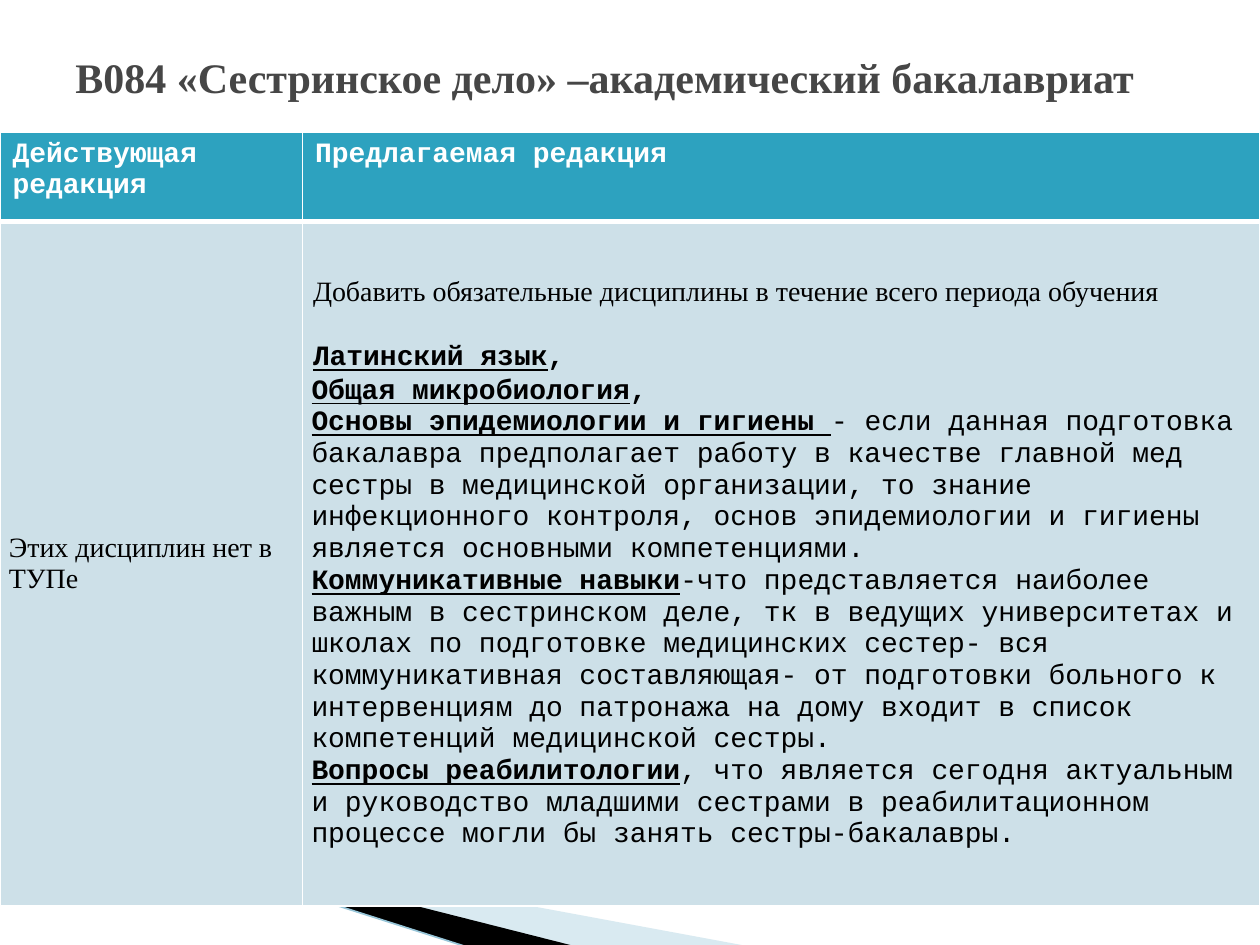
import pptx
import pptx.util
import pptx.dml.color
import pptx.enum.shapes
import pptx.enum.text
import pptx.oxml
import pptx.oxml.ns
from lxml import etree

Cm = pptx.util.Cm
Pt = pptx.util.Pt
RGBColor = pptx.dml.color.RGBColor
qn = pptx.oxml.ns.qn
ALIGN = pptx.enum.text.PP_ALIGN
ANCHOR = pptx.enum.text.MSO_ANCHOR

WHITE = RGBColor(0xFF, 0xFF, 0xFF)
BLACK = RGBColor(0, 0, 0)
GRAY = RGBColor(0x46, 0x46, 0x46)
TEAL = RGBColor(0x2D, 0xA2, 0xBF)
PALE = RGBColor(0xCD, 0xE0, 0xE8)
WAVE = RGBColor(0xA0, 0xCB, 0xDC)
EDGE = RGBColor(0x97, 0xC5, 0xD8)
SERIF, MONO = "Times New Roman", "Courier New"

TITLE = "В084 «Сестринское дело» –академический бакалавриат"
HEADERS = ["Действующая редакция", "Предлагаемая редакция"]
CURRENT = "Этих дисциплин нет в ТУПе"
INTRO = "Добавить обязательные дисциплины в течение всего периода обучения"
DISCIPLINES = [
    ("Латинский язык", ",", True),
    ("Общая микробиология", ",", True),
    ("Основы эпидемиологии и гигиены ",
     "- если данная подготовка бакалавра предполагает работу в качестве главной мед сестры "
     "в медицинской организации, то знание инфекционного контроля, основ эпидемиологии и "
     "гигиены является основными компетенциями.", False),
    ("Коммуникативные навыки",
     "-что представляется наиболее важным в сестринском деле, тк в ведущих университетах и "
     "школах по подготовке медицинских сестер- вся коммуникативная составляющая- от "
     "подготовки больного к интервенциям до патронажа на дому входит в список компетенций "
     "медицинской сестры.", False),
    ("Вопросы реабилитологии",
     ", что является сегодня актуальным и руководство младшими сестрами в реабилитационном "
     "процессе могли бы занять сестры-бакалавры.", False),
]
WAVES = [
    (WAVE, 40, [(1.4, 16.54), (15.11, 19.08), (11.58, 19.08), (1.4, 16.51)]),
    (BLACK, 100, [(1.35, 16.48), (11.61, 19.08), (9.45, 19.1), (1.37, 16.51)]),
]
COLUMNS = [6.1, 19.3]
ROWS = [1.8, 13.79]


def add_wave(slide, color, opacity, points):
    corners = [(Cm(x), Cm(y)) for x, y in points]
    builder = slide.shapes.build_freeform(*corners[0])
    builder.add_line_segments(corners[1:], close=True)
    shape = builder.convert_to_shape()
    shape.shadow.inherit = False
    shape.fill.solid()
    shape.fill.fore_color.rgb = color
    shape.line.fill.background()
    if opacity < 100:
        srgb = shape.fill._xPr.find(".//" + qn("a:srgbClr"))
        etree.SubElement(srgb, qn("a:alpha")).set("val", str(opacity * 1000))


def add_run(paragraph, text, font, color, size=16, bold=False, underline=False):
    run = paragraph.add_run()
    run.text = text
    run.font.name = font
    run.font.size = Pt(size)
    run.font.color.rgb = color
    run.font.bold = bold
    run.font.underline = underline


def style_cell(cell, color, top, bottom):
    properties = cell._tc.get_or_add_tcPr()
    for side, width in (("L", 1), ("R", 1), ("T", top), ("B", bottom)):
        border = etree.SubElement(properties, qn("a:ln" + side), w=str(Pt(width)))
        fill = etree.SubElement(border, qn("a:solidFill"))
        etree.SubElement(fill, qn("a:srgbClr"), val=str(WHITE))
    cell.fill.solid()
    cell.fill.fore_color.rgb = color


def main():
    presentation = pptx.Presentation()
    presentation.slide_width, presentation.slide_height = Cm(25.4), Cm(19.05)
    slide = presentation.slides.add_slide(presentation.slide_layouts[6])

    for wave in WAVES:
        add_wave(slide, *wave)
    edge = slide.shapes.add_connector(
        pptx.enum.shapes.MSO_CONNECTOR.STRAIGHT, Cm(-0.03), Cm(16.08), Cm(9.45), Cm(19.1))
    edge.line.color.rgb = EDGE
    edge.line.width = Pt(0.95)
    etree.SubElement(edge._element.spPr, qn("a:effectLst"))

    title = slide.shapes.add_textbox(Cm(1.27), Cm(0.36), Cm(22.86), Cm(2.39))
    title.text_frame.word_wrap = True
    title.text_frame.vertical_anchor = ANCHOR.MIDDLE
    add_run(title.text_frame.paragraphs[0], TITLE, SERIF, GRAY, size=24, bold=True)

    table = slide.shapes.add_table(
        2, 2, Cm(0), Cm(2.67), Cm(sum(COLUMNS)), Cm(sum(ROWS))).table
    for column, width in zip(table.columns, COLUMNS):
        column.width = Cm(width)
    for row, height in zip(table.rows, ROWS):
        row.height = Cm(height)

    for index, header in enumerate(HEADERS):
        cell = table.cell(0, index)
        style_cell(cell, TEAL, 1, 3)
        add_run(cell.text_frame.paragraphs[0], header, MONO, WHITE, bold=True)
        body = table.cell(1, index)
        style_cell(body, PALE, 3, 1)
        body.vertical_anchor = ANCHOR.MIDDLE
        body.margin_left = body.margin_right = Cm(0.18)
        body.margin_top = body.margin_bottom = Cm(0)

    add_run(table.cell(1, 0).text_frame.paragraphs[0], CURRENT, SERIF, BLACK)

    proposal = table.cell(1, 1).text_frame
    intro = proposal.paragraphs[0]
    add_run(intro, INTRO, SERIF, BLACK)
    for name, remark, bold_remark in DISCIPLINES:
        paragraph = proposal.add_paragraph()
        add_run(paragraph, name, MONO, BLACK, bold=True, underline=True)
        add_run(paragraph, remark, MONO, BLACK, bold=bold_remark)
    for paragraph, gap in zip(proposal.paragraphs, (20, 1)):
        paragraph.alignment = ALIGN.JUSTIFY
        paragraph.space_after = Pt(gap)
        paragraph._p.get_or_add_pPr().set("marL", str(Cm(0.03)))

    presentation.save("out.pptx")


if __name__ == "__main__":
    main()
